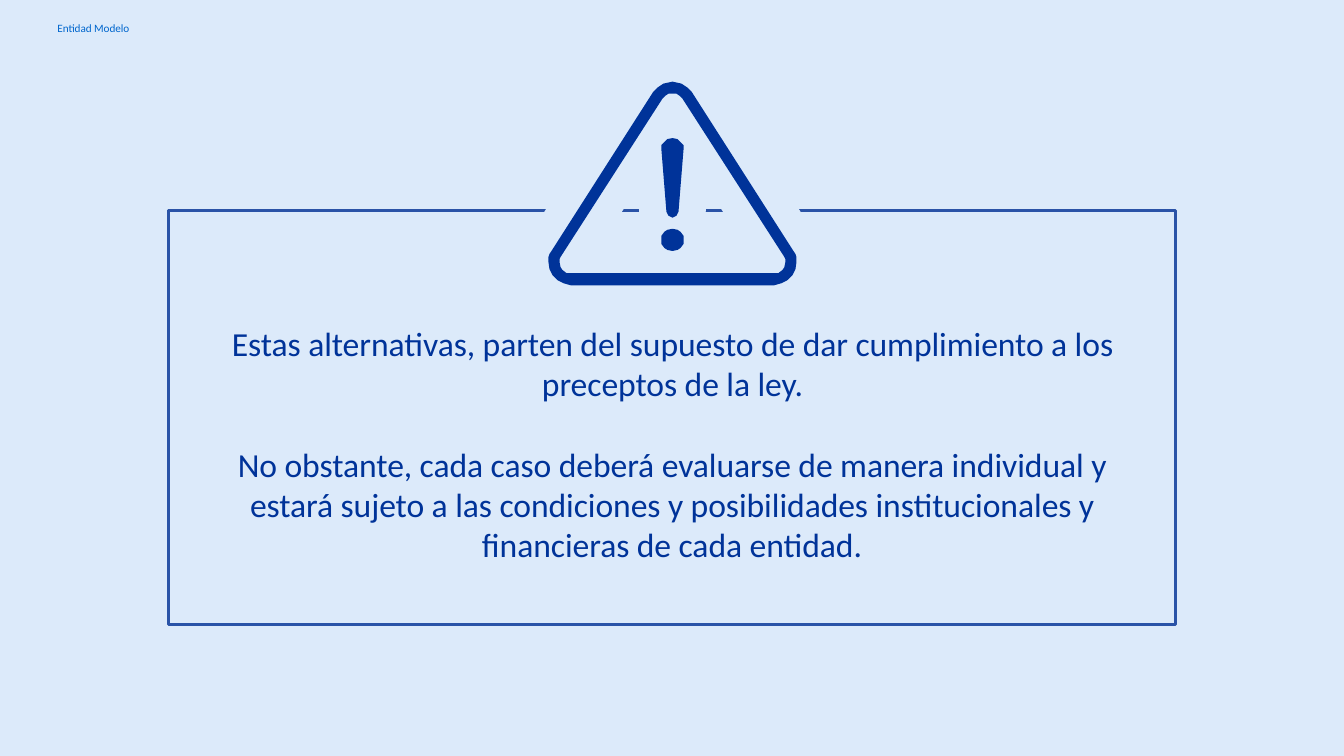
import dataclasses

import pptx
import pptx.dml.color
import pptx.enum.shapes
import pptx.enum.text
import pptx.util

Inches = pptx.util.Inches
Pt = pptx.util.Pt


@dataclasses.dataclass(frozen=True)
class Theme:
    font: str = "Calibri"
    background: str = "DCEAFA"
    ink: str = "003399"
    header: str = "0066CD"
    frame: str = "2A53A7"
    message_size: float = 24
    header_size: float = 8
    frame_width: float = 2.04
    halo_width: float = 38.75


THEME = Theme()
SIGN_CENTER = 6.67

# Left halves of the sign's outlines, from top to bottom, in inches.
OUTER_EDGE = [
    (6.67, 0.81), (6.58, 0.83), (6.52, 0.87), (6.48, 0.91), (5.47, 2.49),
    (5.45, 2.52), (5.44, 2.55), (5.44, 2.6), (5.45, 2.67), (5.48, 2.73),
    (5.53, 2.78), (5.59, 2.81), (5.66, 2.83),
]
INNER_EDGE = [
    (6.67, 0.93), (6.63, 0.93), (6.6, 0.95), (6.57, 0.98), (5.56, 2.55),
    (5.55, 2.57), (5.55, 2.6), (5.56, 2.65), (5.58, 2.68), (5.62, 2.71),
    (5.66, 2.71),
]
EXCLAMATION_DOT = [
    (6.67, 2.27), (6.62, 2.28), (6.59, 2.3), (6.56, 2.34), (6.56, 2.38),
    (6.56, 2.42), (6.59, 2.46), (6.62, 2.48), (6.67, 2.49),
]
EXCLAMATION_STROKE = [
    (6.67, 1.37), (6.62, 1.38), (6.59, 1.41), (6.56, 1.44), (6.56, 1.48),
    (6.61, 2.1), (6.62, 2.12), (6.63, 2.14), (6.65, 2.15), (6.67, 2.16),
]
SIGN_HALVES = [OUTER_EDGE, INNER_EDGE, EXCLAMATION_DOT, EXCLAMATION_STROKE]


def rgb(color):
    return pptx.dml.color.RGBColor.from_string(color)


def paint(shape, fill=None, line=None, width=0):
    shape.shadow.inherit = False
    if fill:
        shape.fill.solid()
        shape.fill.fore_color.rgb = rgb(fill)
    else:
        shape.fill.background()
    if line:
        shape.line.color.rgb = rgb(line)
        shape.line.width = Pt(width)
    else:
        shape.line.fill.background()


def write_text(holder, box, paragraphs, *, size, color, align=None, tracking=-0.05):
    """Place a text holder at box and fill it; tracking is in points."""
    holder.left, holder.top, holder.width, holder.height = map(Inches, box)
    frame = holder.text_frame
    frame.word_wrap = True
    frame.auto_size = pptx.enum.text.MSO_AUTO_SIZE.NONE
    frame.vertical_anchor = pptx.enum.text.MSO_ANCHOR.TOP
    frame.margin_left = frame.margin_right = frame.margin_bottom = 0
    frame.margin_top = Inches(0.02)
    frame.text = "\n".join(paragraphs)
    for index, paragraph in enumerate(frame.paragraphs):
        paragraph.alignment = align
        paragraph.line_spacing = 1.0
        paragraph.space_before = Pt(0 if index else 1.3)
        for run in paragraph.runs:
            run.font.name = THEME.font
            run.font.size = Pt(size)
            run.font.color.rgb = rgb(color)
            run.font._element.set("spc", str(round(tracking * 100)))


def mirrored(half):
    """Complete a left half outline with its reflection on the sign's axis."""
    return half + [(2 * SIGN_CENTER - x, y) for x, y in reversed(half)]


def add_sign(slide, **look):
    outlines = [
        [(Inches(x), Inches(y)) for x, y in mirrored(half)] for half in SIGN_HALVES
    ]
    builder = slide.shapes.build_freeform(*outlines[0][0])
    for outline in outlines:
        if outline is not outlines[0]:
            builder.move_to(*outline[0])
        builder.add_line_segments(outline[1:], close=True)
    paint(builder.convert_to_shape(), **look)


def add_frame(slide, box):
    frame = slide.shapes.add_shape(
        pptx.enum.shapes.MSO_SHAPE.RECTANGLE, *map(Inches, box)
    )
    paint(frame, line=THEME.frame, width=THEME.frame_width)


def add_text(slide, box, paragraphs, **text_format):
    holder = slide.shapes.add_textbox(*map(Inches, box))
    write_text(holder, box, paragraphs, **text_format)


def main():
    deck = pptx.Presentation()
    deck.slide_width, deck.slide_height = Inches(13.33), Inches(7.5)
    slide = deck.slides.add_slide(deck.slide_layouts.get_by_name("Title Only"))
    slide.background.fill.solid()
    slide.background.fill.fore_color.rgb = rgb(THEME.background)

    message = dict(
        size=THEME.message_size,
        color=THEME.ink,
        align=pptx.enum.text.PP_ALIGN.CENTER,
    )
    add_text(
        slide, (0.57, 0.19, 1, 0.15), ["Entidad Modelo"],
        size=THEME.header_size, color=THEME.header,
    )
    add_frame(slide, (1.67, 2.09, 9.99, 4.11))
    write_text(
        slide.shapes.title, (2.23, 3.18, 8.88, 0.84),
        [
            "Estas alternativas, parten del supuesto de dar cumplimiento a los",
            "preceptos de la ley.",
        ],
        **message,
    )
    add_text(
        slide, (2.28, 4.38, 8.77, 1.24),
        [
            "No obstante, cada caso deberá evaluarse de manera individual y "
            "estará sujeto a las condiciones y posibilidades institucionales y "
            "financieras de cada entidad."
        ],
        **message,
    )
    add_sign(slide, line=THEME.background, width=THEME.halo_width)
    add_sign(slide, fill=THEME.ink)
    deck.save("out.pptx")


if __name__ == "__main__":
    main()
